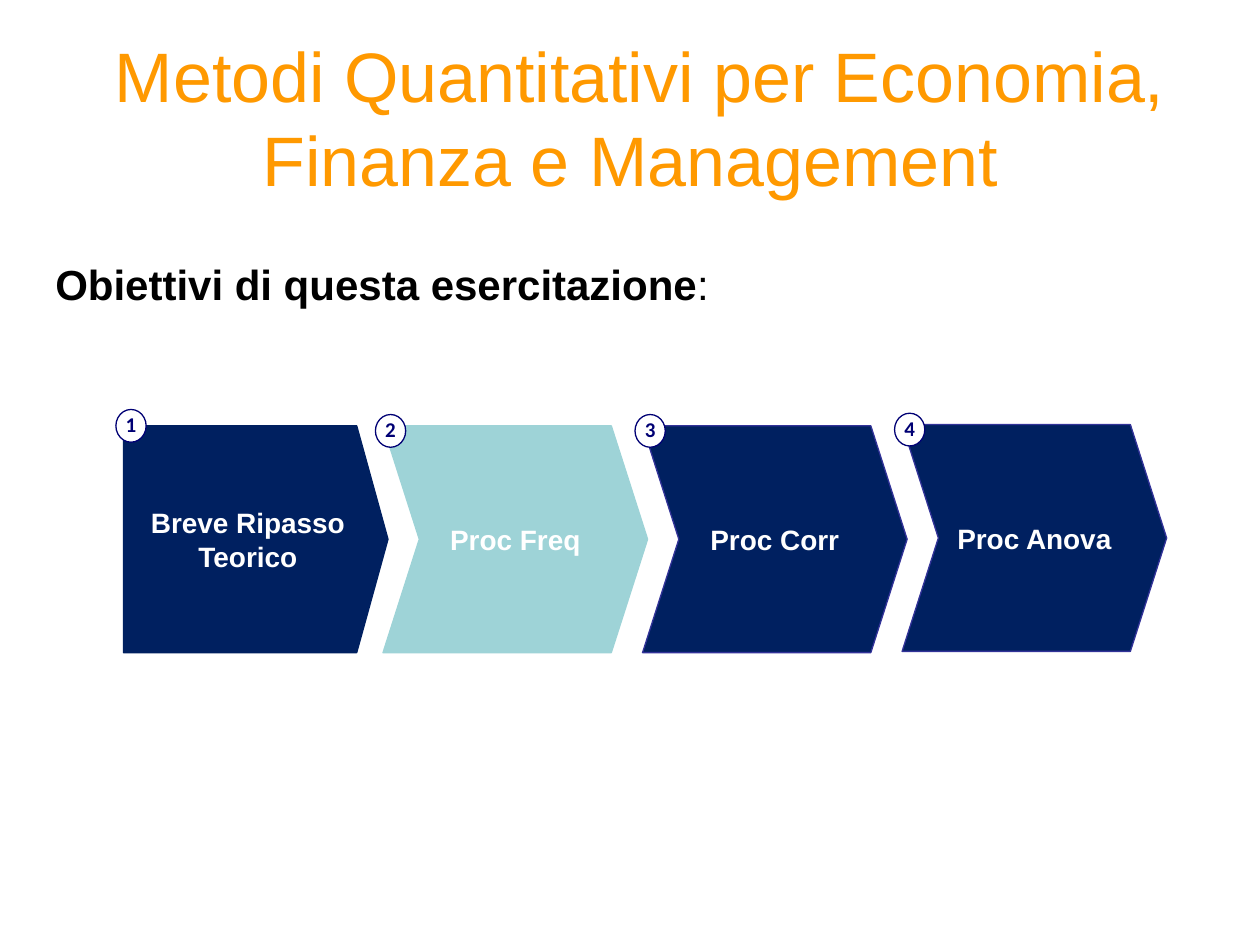
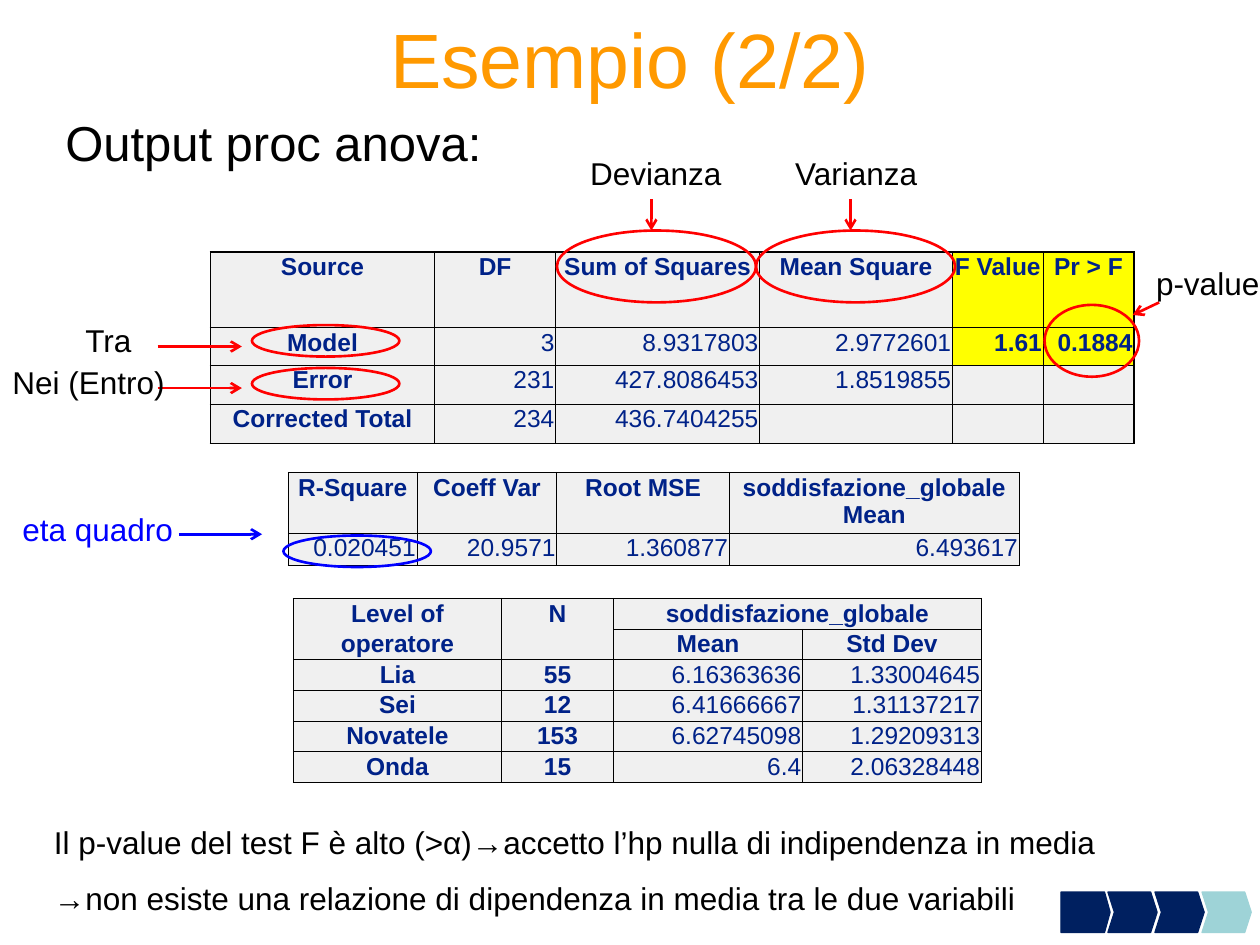
"""Build two slides on quantitative methods: the exercise goals and an ANOVA output example."""
from dataclasses import dataclass, field

import pptx
import pptx.dml.color
import pptx.enum.dml
import pptx.enum.shapes
import pptx.enum.text
import pptx.oxml.ns
import pptx.util
from lxml import etree
from pptx.util import Inches

ALIGN = pptx.enum.text.PP_ALIGN
SHAPE = pptx.enum.shapes.MSO_SHAPE
MIDDLE = pptx.enum.text.MSO_ANCHOR.MIDDLE
qn = pptx.oxml.ns.qn


@dataclass(frozen=True)
class Theme:
    font: str = "Arial"
    badge_font: str = "Calibri"
    title: str = "FF9900"
    ink: str = "000000"
    white: str = "FFFFFF"
    navy: str = "002060"
    teal: str = "9ED3D7"
    indigo: str = "333399"
    badge: str = "000074"
    table_ink: str = "002288"
    table_fill: str = "F0F0F0"
    highlight: str = "FFFF00"
    red: str = "FF0000"
    blue: str = "0000FF"
    title_size: int = 40
    short_title_size: int = 44
    lead_size: int = 28
    goal_size: int = 24
    note_size: int = 18
    step_size: int = 16
    table_size: int = 14
    badge_size: int = 12
    hairline: float = 0.5
    outline: float = 0.75
    frame: float = 1
    mark: float = 1.5


THEME = Theme()


@dataclass(frozen=True)
class Box:
    left: float
    top: float
    width: float
    height: float

    def emu(self) -> tuple:
        return tuple(Inches(v) for v in (self.left, self.top, self.width, self.height))


@dataclass(frozen=True)
class Note:
    box: Box
    text: str
    size: int = THEME.note_size
    color: str = THEME.ink
    align: ALIGN = ALIGN.LEFT


@dataclass(frozen=True)
class Ring:
    box: Box
    color: str = THEME.red


@dataclass(frozen=True)
class Arrow:
    start: tuple
    end: tuple
    color: str = THEME.red


@dataclass(frozen=True)
class Step:
    label: str
    edge: str
    top: float = 3.38
    badge_top: float = 3.29


@dataclass(frozen=True)
class Output:
    box: Box
    widths: list
    heights: list
    rows: list
    header_rows: int = 1
    label_columns: int = 1
    highlighted: set = field(default_factory=set)
    merges: list = field(default_factory=list)
    open_below: set = field(default_factory=set)


STEPS = [
    Step("Breve Ripasso Teorico", THEME.navy, badge_top=3.25),
    Step("Proc Freq", THEME.teal),
    Step("Proc Corr", THEME.indigo),
    Step("Proc Anova", THEME.indigo, top=3.37, badge_top=3.28),
]

VARIANCE = Output(
    Box(1.67, 2, 7.33, 1.52), [1.78, 0.96, 1.62, 1.53, 0.72, 0.72], [0.6, 0.3, 0.31, 0.31],
    [["Source", "DF", "Sum of Squares", "Mean Square", "F Value", "Pr > F"],
     ["Model", "3", "8.9317803", "2.9772601", "1.61", "0.1884"],
     ["Error", "231", "427.8086453", "1.8519855", "", ""],
     ["Corrected Total", "234", "436.7404255", "", "", ""]],
    highlighted={(0, 4), (0, 5), (1, 4), (1, 5)},
)
FIT = Output(
    Box(2.29, 3.75, 5.8, 0.74), [1.02, 1.11, 1.37, 2.3], [0.48, 0.26],
    [["R-Square", "Coeff Var", "Root MSE", "soddisfazione_globale Mean"],
     ["0.020451", "20.9571", "1.360877", "6.493617"]],
    label_columns=0,
)
OPERATORS = Output(
    Box(2.33, 4.75, 5.46, 1.46), [1.65, 0.89, 1.5, 1.42], [1.46 / 6] * 6,
    [["Level of", "N", "soddisfazione_globale", ""],
     ["operatore", "", "Mean", "Std Dev"],
     ["Lia", "55", "6.16363636", "1.33004645"],
     ["Sei", "12", "6.41666667", "1.31137217"],
     ["Novatele", "153", "6.62745098", "1.29209313"],
     ["Onda", "15", "6.4", "2.06328448"]],
    header_rows=2, label_columns=2,
    merges=[((0, 1), (1, 1)), ((0, 2), (0, 3))], open_below={(0, 0)},
)

RINGS = [
    Ring(Box(4.42, 1.83, 1.58, 0.57)),
    Ring(Box(6, 1.83, 1.58, 0.57)),
    Ring(Box(2, 2.58, 1.17, 0.25)),
    Ring(Box(2, 2.92, 1.17, 0.25)),
    Ring(Box(8.29, 2.42, 0.75, 0.57)),
    Ring(Box(2.25, 4.25, 1.17, 0.25), THEME.blue),
]
ARROWS = [
    Arrow((5.17, 1.58), (5.17, 1.83)),
    Arrow((6.75, 1.58), (6.75, 1.83)),
    Arrow((1.25, 2.75), (1.92, 2.75)),
    Arrow((1.25, 3.08), (1.92, 3.08)),
    Arrow((9.2, 2.4), (8.99, 2.5)),
    Arrow((1.42, 4.24), (2.08, 4.24), THEME.blue),
]
NOTES = [
    Note(Box(0.42, 0.84, 9.08, 0.57), "Output proc anova:", THEME.lead_size),
    Note(Box(4.33, 1.17, 1.75, 0.4), "Devianza", align=ALIGN.CENTER),
    Note(Box(5.92, 1.17, 1.75, 0.4), "Varianza", align=ALIGN.CENTER),
    Note(Box(0.58, 2.5, 0.67, 0.4), "Tra"),
    Note(Box(0, 2.83, 1.58, 0.4), "Nei (Entro)"),
    Note(Box(8.86, 2.05, 1.45, 0.4), "p-value", align=ALIGN.CENTER),
    Note(Box(0.08, 4, 1.67, 0.4), "eta quadro", color=THEME.blue),
    Note(Box(0.33, 6.48, 9.5, 0.86),
         "Il p-value del test F è alto (>α)→accetto l’hp nulla di indipendenza in media\n"
         "→non esiste una relazione di dipendenza in media tra le due variabili"),
]


def rgb(color: str) -> pptx.dml.color.RGBColor:
    return pptx.dml.color.RGBColor.from_string(color)


def format_text(frame, size: int, color: str, align: ALIGN = ALIGN.LEFT,
                bold: bool = False, font: str = THEME.font) -> None:
    for paragraph in frame.paragraphs:
        paragraph.alignment = align
        for run in paragraph.runs:
            run.font.name, run.font.size, run.font.bold = font, pptx.util.Pt(size), bold
            run.font.color.rgb = rgb(color)


def add_titled_slide(deck, text: str, top: float, size: int):
    slide = deck.slides.add_slide(deck.slide_layouts.get_by_name("Title Only"))
    title = slide.shapes.title
    title.left, title.top, title.width, title.height = Box(0.5, top, 9, 1.25).emu()
    title.text_frame.text = text
    title.text_frame.auto_size = pptx.enum.text.MSO_AUTO_SIZE.NONE
    title.text_frame.vertical_anchor = MIDDLE
    format_text(title.text_frame, size, THEME.title, ALIGN.CENTER)
    return slide


def add_note(slide, note: Note):
    frame = slide.shapes.add_textbox(*note.box.emu()).text_frame
    frame.word_wrap = True
    frame.text = note.text
    format_text(frame, note.size, note.color, note.align)
    for paragraph in frame.paragraphs[1:]:
        paragraph.space_before = pptx.util.Pt(note.size * 0.58)
    return frame


def add_outlined(slide, kind: SHAPE, box: Box, fill: str | None, edge: str, weight: float):
    outlined = slide.shapes.add_shape(kind, *box.emu())
    outlined.shadow.inherit = False
    if fill:
        outlined.fill.solid()
        outlined.fill.fore_color.rgb = rgb(fill)
    else:
        outlined.fill.background()
    outlined.line.color.rgb = rgb(edge)
    outlined.line.width = pptx.util.Pt(weight)
    return outlined


def add_step(slide, index: int, box: Box, current: int, edge: str | None = None):
    fill = THEME.teal if index == current else THEME.navy
    kind, point = (SHAPE.CHEVRON, 0.16) if index else (SHAPE.PENTAGON, 0.138)
    step = add_outlined(slide, kind, box, fill, edge or fill, THEME.outline)
    step.adjustments[0] = point
    return step


def add_badge(slide, number: int, left: float, top: float) -> None:
    badge = add_outlined(slide, SHAPE.OVAL, Box(left, top, 0.24, 0.26),
                         THEME.white, THEME.badge, THEME.outline)
    frame = badge.text_frame
    frame.text = str(number)
    frame.word_wrap = False
    frame.vertical_anchor = MIDDLE
    frame.paragraphs[0].line_spacing = 0.9
    format_text(frame, THEME.badge_size, THEME.badge, ALIGN.CENTER, True, THEME.badge_font)


def add_arrow(slide, arrow: Arrow) -> None:
    ends = [Inches(v) for v in (*arrow.start, *arrow.end)]
    pointer = slide.shapes.add_connector(pptx.enum.shapes.MSO_CONNECTOR.STRAIGHT, *ends)
    pointer.line.color.rgb = rgb(arrow.color)
    pointer.line.width = pptx.util.Pt(THEME.mark)
    etree.SubElement(pointer.line._get_or_add_ln(), qn("a:tailEnd"), type="arrow")
    etree.SubElement(pointer._element.spPr, qn("a:effectLst"))


def add_border(cell, side: str, weight: float) -> None:
    border = etree.SubElement(cell._tc.get_or_add_tcPr(), qn(f"a:ln{side}"),
                              w=str(pptx.util.Pt(weight)))
    if weight:
        paint = etree.SubElement(border, qn("a:solidFill"))
        etree.SubElement(paint, qn("a:srgbClr"), val=THEME.ink)
    else:
        etree.SubElement(border, qn("a:noFill"))


def format_cell(cell, output: Output, row: int, column: int) -> None:
    last_row, last_column = len(output.rows) - 1, len(output.widths) - 1
    outer = {"L": column == 0, "R": column == last_column, "T": row == 0, "B": row == last_row}
    is_open = {"T": (row - 1, column) in output.open_below, "B": (row, column) in output.open_below}
    for side, on_frame in outer.items():
        weight = THEME.frame if on_frame else THEME.hairline
        add_border(cell, side, 0 if is_open.get(side) else weight)
    marked = (row, column) in output.highlighted
    cell.fill.solid()
    cell.fill.fore_color.rgb = rgb(THEME.highlight if marked else THEME.table_fill)
    cell.margin_left = cell.margin_right = cell.margin_top = Inches(0.01)
    cell.margin_bottom = 0
    heading = row < output.header_rows or column < output.label_columns
    text = output.rows[row][column]
    if text:
        cell.text_frame.text = text
        format_text(cell.text_frame, THEME.table_size, THEME.table_ink,
                    ALIGN.CENTER if heading else ALIGN.RIGHT, heading or marked)
    else:
        etree.SubElement(cell.text_frame.paragraphs[0]._p, qn("a:endParaRPr"),
                         sz=str(THEME.table_size * 100))


def add_output(slide, output: Output) -> None:
    table = slide.shapes.add_table(len(output.rows), len(output.widths), *output.box.emu()).table
    table.first_row = table.horz_banding = False
    for column, width in zip(table.columns, output.widths):
        column.width = Inches(width)
    for row, height in zip(table.rows, output.heights):
        row.height = Inches(height)
    for first, last in output.merges:
        table.cell(*first).merge(table.cell(*last))
    for row in range(len(output.rows)):
        for column in range(len(output.widths)):
            format_cell(table.cell(row, column), output, row, column)


def build_goals(deck) -> None:
    slide = add_titled_slide(deck, " Metodi Quantitativi per Economia, Finanza e Management",
                             0.3, THEME.title_size)
    goals = add_note(slide, Note(Box(0.34, 2, 9.41, 0.5), "Obiettivi di questa esercitazione",
                                 THEME.goal_size))
    goals.paragraphs[0].runs[0].font.bold = True
    goals.paragraphs[0].add_run().text = ":"
    colon = goals.paragraphs[0].runs[1].font
    colon.name, colon.size = THEME.font, pptx.util.Pt(THEME.goal_size)
    colon.color.rgb = rgb(THEME.ink)
    for index, step in enumerate(STEPS):
        left = 0.98 + 2.06 * index
        frame = add_step(slide, index, Box(left, step.top, 2.1, 1.8), 1, step.edge).text_frame
        frame.text = step.label
        frame.word_wrap = True
        frame.vertical_anchor = MIDDLE
        frame.margin_left = frame.margin_right = Inches(0.08)
        frame.margin_top = frame.margin_bottom = Inches(0.04)
        format_text(frame, THEME.step_size, THEME.white, ALIGN.CENTER, True)
        add_badge(slide, index + 1, left - 0.06, step.badge_top)


def build_example(deck) -> None:
    slide = add_titled_slide(deck, "Esempio (2/2)", -0.17, THEME.short_title_size)
    for output in (VARIANCE, FIT, OPERATORS):
        add_output(slide, output)
    for ring in RINGS:
        add_outlined(slide, SHAPE.OVAL, ring.box, None, ring.color, THEME.mark)
    for arrow in ARROWS:
        add_arrow(slide, arrow)
    for note in NOTES:
        add_note(slide, note)
    for index in range(len(STEPS)):
        add_step(slide, index, Box(8.42 + 1.12 * index / 3, 7.08, 0.39, 0.32), 3)


def main() -> None:
    deck = pptx.Presentation()
    deck.slide_width, deck.slide_height = Inches(10), Inches(7.5)
    build_goals(deck)
    build_example(deck)
    deck.save("out.pptx")


if __name__ == "__main__":
    main()
